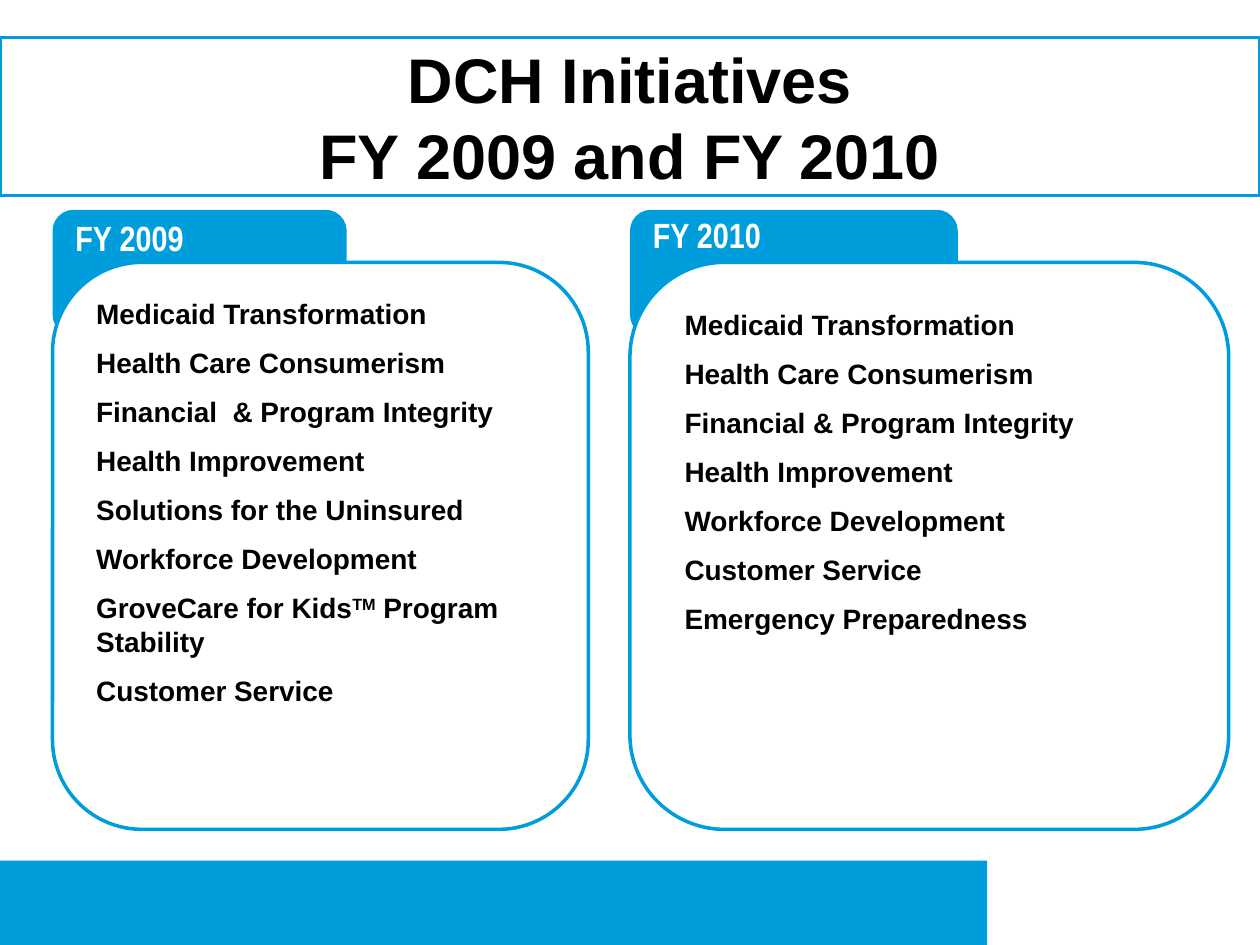
from pptx import Presentation
from pptx.dml.color import RGBColor
from pptx.enum.shapes import MSO_SHAPE as Preset
from pptx.enum.text import MSO_ANCHOR as Anchor, PP_ALIGN as Align
from pptx.util import Cm, Pt

BLUE = RGBColor(0x00, 0x9D, 0xDC)
WHITE = RGBColor(0xFF, 0xFF, 0xFF)
BLACK = RGBColor(0x00, 0x00, 0x00)

SLIDE_WIDTH, SLIDE_HEIGHT = 25.4, 19.05
TAB_TOP, TAB_HEIGHT = 4.23, 2.54
CARD_TOP, CARD_HEIGHT = 5.29, 11.43
TRADEMARK = "TM"

INITIATIVES_2009 = [
    "Medicaid Transformation",
    "Health Care Consumerism",
    "Financial  & Program Integrity",
    "Health Improvement",
    "Solutions for the Uninsured",
    "Workforce Development",
    ("GroveCare for Kids", TRADEMARK, " Program Stability"),
    "Customer Service",
]
INITIATIVES_2010 = [
    "Medicaid Transformation",
    "Health Care Consumerism",
    "Financial & Program Integrity",
    "Health Improvement",
    "Workforce Development",
    "Customer Service",
    "Emergency Preparedness",
]


class SlideBuilder:
    body_font = "Arial"
    label_font = "Arial Narrow"
    line_width = Pt(2)
    item_gap = Pt(8.8)
    corner = 0.167

    def __init__(self, slide):
        self.slide = slide

    def box(self, shapes, preset, left, top, width, height, fill=None, line=None):
        shape = shapes.add_shape(preset, Cm(left), Cm(top), Cm(width), Cm(height))
        shape.shadow.inherit = False
        if preset == Preset.ROUNDED_RECTANGLE:
            shape.adjustments[0] = self.corner
        if fill is None:
            shape.fill.background()
        else:
            shape.fill.solid()
            shape.fill.fore_color.rgb = fill
        if line is None:
            shape.line.fill.background()
        else:
            shape.line.color.rgb = line
            shape.line.width = self.line_width
        return shape

    def style(self, paragraph, name, size, color):
        font = paragraph.font
        font.name = name
        font.size = Pt(size)
        font.bold = True
        font.color.rgb = color

    def footer(self):
        self.box(self.slide.shapes, Preset.RECTANGLE,
                 0, 17.35, 19.9, SLIDE_HEIGHT - 17.35, fill=BLUE)

    def title(self, text):
        shape = self.box(self.slide.shapes, Preset.RECTANGLE,
                         0, 0.76, SLIDE_WIDTH, 3.18, line=BLUE)
        frame = shape.text_frame
        frame.word_wrap = True
        frame.vertical_anchor = Anchor.MIDDLE
        paragraph = frame.paragraphs[0]
        paragraph.text = text
        paragraph.alignment = Align.CENTER
        self.style(paragraph, self.body_font, 36, BLACK)

    def folder(self, left, tab_width, card_width):
        shapes = self.slide.shapes.add_group_shape().shapes
        self.box(shapes, Preset.ROUNDED_RECTANGLE,
                 left, TAB_TOP, tab_width, TAB_HEIGHT, fill=BLUE)
        self.box(shapes, Preset.ROUNDED_RECTANGLE,
                 left, CARD_TOP, card_width, CARD_HEIGHT, fill=WHITE, line=BLUE)

    def text_box(self, left, top, width, height):
        box = self.slide.shapes.add_textbox(Cm(left), Cm(top), Cm(width), Cm(height))
        box.text_frame.word_wrap = True
        return box.text_frame

    def label(self, text, left, top):
        paragraph = self.text_box(left, top, 3.39, 1.1).paragraphs[0]
        paragraph.text = text
        self.style(paragraph, self.label_font, 20, WHITE)

    def item_list(self, items, left, top, height):
        frame = self.text_box(left, top, 10.13, height)
        for index, item in enumerate(items):
            paragraph = frame.paragraphs[0] if index == 0 else frame.add_paragraph()
            if index:
                paragraph.space_before = self.item_gap
            for part in [item] if isinstance(item, str) else item:
                run = paragraph.add_run()
                run.text = part
                if part == TRADEMARK:
                    run._r.get_or_add_rPr().set("baseline", "30000")
            self.style(paragraph, self.body_font, 16, BLACK)


def main():
    presentation = Presentation()
    presentation.slide_width = Cm(SLIDE_WIDTH)
    presentation.slide_height = Cm(SLIDE_HEIGHT)
    slide = presentation.slides.add_slide(presentation.slide_layouts[6])

    builder = SlideBuilder(slide)
    builder.footer()
    builder.folder(1.06, 5.93, 10.8)
    builder.label("FY 2009", 1.27, 4.23)
    builder.folder(12.7, 6.61, 12.07)
    builder.label("FY 2010", 12.91, 4.18)
    builder.title("DCH Initiatives\vFY 2009 and FY 2010")
    builder.item_list(INITIATIVES_2010, 13.55, 6.08, 7.04)
    builder.item_list(INITIATIVES_2009, 1.69, 5.86, 8.74)
    presentation.save("out.pptx")


if __name__ == "__main__":
    main()
